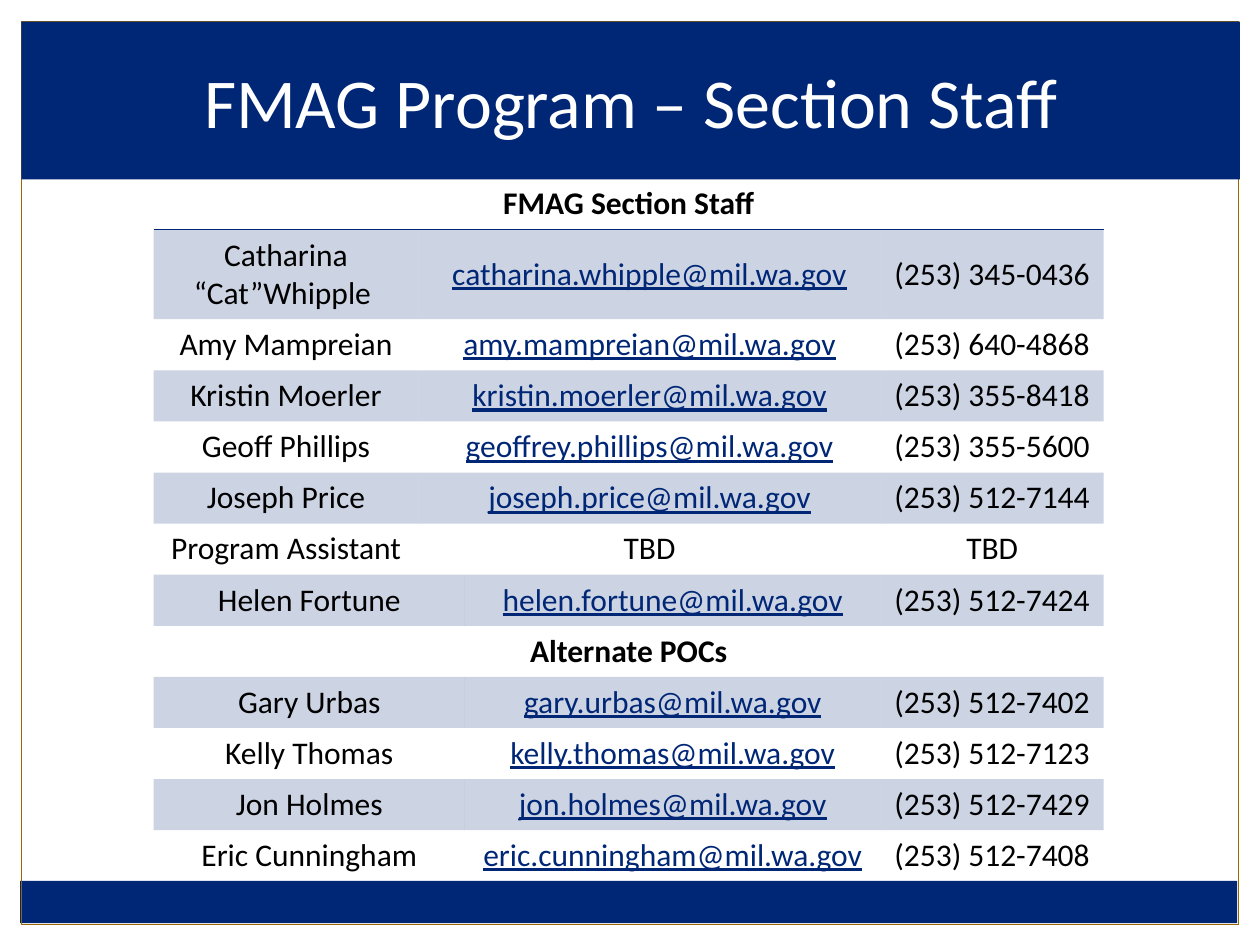
from typing import NamedTuple

from lxml import etree
from pptx import Presentation
from pptx import util as u
from pptx.dml.color import RGBColor
from pptx.enum import shapes, text
from pptx.oxml import ns

NAVY, GOLD, WHITE, BLACK = "002676", "996600", "FFFFFF", "000000"
FONT = "Calibri"
WIDTH, HEIGHT = u.Inches(10), u.Inches(7.5)
COLUMNS = (2.1, 0.37, 3.3, 1.77)
ROW_HEIGHT = 0.4
NO_STYLE = "{2D5ABB26-0587-4C30-8999-92F81FD0307C}"


class Area(NamedTuple):
    """Left, top, width and height as shares of the slide."""
    left: float
    top: float
    width: float
    height: float

    def lengths(self) -> list[int]:
        return [round(share * side) for share, side in zip(self, (WIDTH, HEIGHT) * 2)]


class Contact(NamedTuple):
    name: str
    email: str
    phone: str
    name_span: int = 1


class Heading(NamedTuple):
    title: str


ROWS = (
    Heading("FMAG Section Staff"),
    Contact("Catharina “Cat”Whipple ", "catharina.whipple@mil.wa.gov", "(253) 345-0436"),
    Contact("Amy Mampreian", "amy.mampreian@mil.wa.gov", "(253) 640-4868"),
    Contact("Kristin Moerler", "kristin.moerler@mil.wa.gov", "(253) 355-8418"),
    Contact("Geoff Phillips", "geoffrey.phillips@mil.wa.gov", "(253) 355-5600"),
    Contact("Joseph Price", "joseph.price@mil.wa.gov", "(253) 512-7144"),
    Contact("Program Assistant", "TBD", "TBD"),
    Contact("Helen Fortune", "helen.fortune@mil.wa.gov", "(253) 512-7424", 2),
    Heading("Alternate POCs"),
    Contact("Gary Urbas", "gary.urbas@mil.wa.gov", "(253) 512-7402", 2),
    Contact("Kelly Thomas", "kelly.thomas@mil.wa.gov", "(253) 512-7123", 2),
    Contact("Jon Holmes", "jon.holmes@mil.wa.gov", "(253) 512-7429", 2),
    Contact("Eric Cunningham", "eric.cunningham@mil.wa.gov", "(253) 512-7408", 2),
)


def rgb(color: str) -> RGBColor:
    return RGBColor.from_string(color)


def write(frame, words: str, size: float, color: str = BLACK, **styles) -> None:
    paragraph = frame.paragraphs[0]
    paragraph.alignment = text.PP_ALIGN.CENTER
    run = paragraph.add_run()
    run.text = words
    run.font.color.rgb = rgb(color)
    for key, value in {"name": FONT, "size": u.Pt(size), **styles}.items():
        setattr(run.font, key, value)


def draw_panel(slide, area: Area, fill: str | None = None, line: str | None = None):
    panel = slide.shapes.add_shape(shapes.MSO_SHAPE.RECTANGLE, *area.lengths())
    panel.shadow.inherit = False
    for part, color in ((panel.fill, fill), (panel.line.fill, line)):
        if color:
            part.solid()
            part.fore_color.rgb = rgb(color)
        else:
            part.background()
    if line:
        panel.line.width = u.Pt(0.75)
    return panel


def tint(cell) -> None:
    """Fill a cell with navy at 20% opacity."""
    cell.fill.solid()
    cell.fill.fore_color.rgb = rgb(NAVY)
    shade = cell._tc.tcPr.find(ns.qn("a:solidFill")).find(ns.qn("a:srgbClr"))
    etree.SubElement(shade, ns.qn("a:alpha"), val="20000")


def rule(cell, *edges: str) -> None:
    """Draw 1 pt navy borders; edges are given in the order T, B."""
    for position, edge in enumerate(edges):
        border = etree.Element(ns.qn(f"a:ln{edge}"), w=str(u.Pt(1)))
        paint = etree.SubElement(border, ns.qn("a:solidFill"))
        etree.SubElement(paint, ns.qn("a:srgbClr"), val=NAVY)
        cell._tc.get_or_add_tcPr().insert(position, border)


def fill_row(table, index: int, row: Heading | Contact) -> None:
    last = len(COLUMNS) - 1
    if isinstance(row, Heading):
        entries = [(0, last, row.title, {"bold": True})]
    else:
        link = {"color": NAVY, "underline": True} if "@" in row.email else {}
        entries = [(0, row.name_span - 1, row.name, {}),
                   (row.name_span, last - 1, row.email, link),
                   (last, last, row.phone, {})]
    for first, end, words, styles in entries:
        cell = table.cell(index, first)
        if end > first:
            cell.merge(table.cell(index, end))
        cell.vertical_anchor = text.MSO_ANCHOR.MIDDLE
        write(cell.text_frame, words, 18, **styles)
    for column in range(len(COLUMNS)):
        cell = table.cell(index, column)
        if index % 2:
            tint(cell)
        else:
            cell.fill.background()
        if index == 0:
            rule(cell, "T", "B")
        elif index == len(ROWS) - 1:
            rule(cell, "B")


def draw_staff_table(slide) -> None:
    area = Area(0.122, 0.189, sum(COLUMNS) / 10, len(ROWS) * ROW_HEIGHT / 7.5)
    table = slide.shapes.add_table(len(ROWS), len(COLUMNS), *area.lengths()).table
    table.first_row = table.horz_banding = False
    table._tbl.tblPr.find(ns.qn("a:tableStyleId")).text = NO_STYLE
    for column, width in zip(table.columns, COLUMNS):
        column.width = u.Inches(width)
    for index, row in enumerate(ROWS):
        table.rows[index].height = u.Inches(ROW_HEIGHT)
        fill_row(table, index, row)


def main() -> None:
    deck = Presentation()
    deck.slide_width, deck.slide_height = WIDTH, HEIGHT
    slide = deck.slides.add_slide(deck.slide_layouts[6])
    draw_panel(slide, Area(0.016, 0.932, 0.966, 0.045), fill=NAVY)
    draw_panel(slide, Area(0.017, 0.023, 0.966, 0.955), line=GOLD)
    banner = draw_panel(slide, Area(0.017, 0.023, 0.967, 0.167), fill=NAVY)
    banner.text_frame.vertical_anchor = text.MSO_ANCHOR.MIDDLE
    write(banner.text_frame, "FMAG Program – Section Staff", 40, WHITE)
    draw_staff_table(slide)
    deck.save("out.pptx")


if __name__ == "__main__":
    main()
